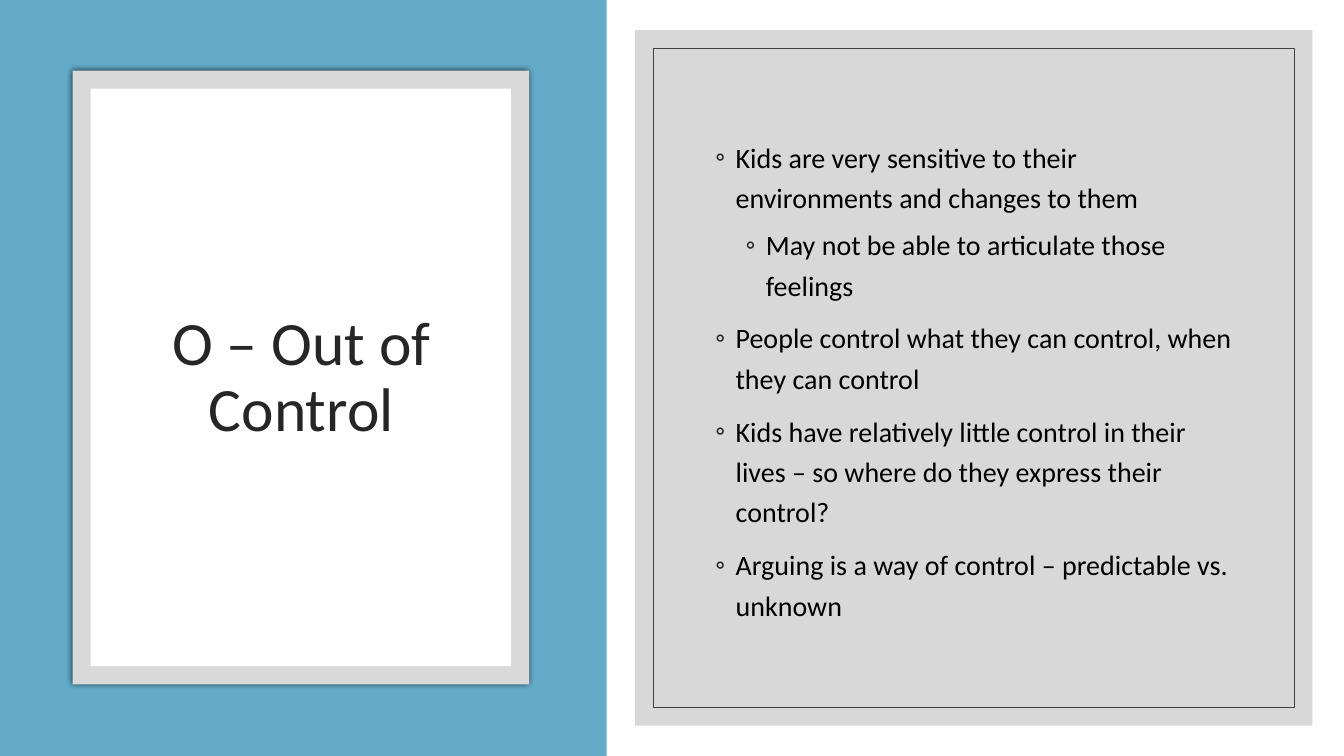
from dataclasses import dataclass

from lxml import etree
from pptx import Presentation
from pptx.dml.color import RGBColor
from pptx.enum.text import MSO_ANCHOR, MSO_AUTO_SIZE, PP_ALIGN
from pptx.enum.shapes import MSO_SHAPE
from pptx.oxml.ns import qn
from pptx.util import Pt

RECT = MSO_SHAPE.RECTANGLE
MIDDLE = MSO_ANCHOR.MIDDLE
FIXED = MSO_AUTO_SIZE.NONE
LEFT, CENTER = PP_ALIGN.LEFT, PP_ALIGN.CENTER


@dataclass(frozen=True)
class Theme:
    font: str = "Calibri"
    white: str = "FFFFFF"
    black: str = "000000"
    blue: str = "63ABC9"
    frame: str = "D9D9D9"
    panel: str = "BFBFBF"
    edge: str = "404040"
    ink: str = "262626"
    head: int = 44
    body: int = 20


WIDE, HIGH = 960, 540
RIM = 12.96  # gap between each outer frame and its inner one
POINTS = [
    (0, "Kids are very sensitive to their environments and changes to them"),
    (1, "May not be able to articulate those feelings"),
    (0, "People control what they can control, when they can control"),
    (0, "Kids have relatively little control in their lives – so where do they express their control?"),
    (0, "Arguing is a way of control – predictable vs. unknown"),
]


def inset(box, gap):
    left, top, width, height = box
    return left + gap, top + gap, width - 2 * gap, height - 2 * gap


def child(parent, tag, **attrs):
    return etree.SubElement(parent, qn(tag), attrs)


class Builder:
    def __init__(self, slide, theme):
        self.slide = slide
        self.theme = theme

    def rect(self, box, fill=None, line=None, alpha=None, glow=False):
        shape = self.slide.shapes.add_shape(RECT, *map(Pt, box))
        shape.shadow.inherit = False
        if fill:
            shape.fill.solid()
            shape.fill.fore_color.rgb = RGBColor.from_string(fill)
        else:
            shape.fill.background()
        if line:
            shape.line.color.rgb = RGBColor.from_string(line)
            shape.line.width = Pt(0.5)
        else:
            shape.line.fill.background()
        props = shape.element.spPr
        if alpha:
            child(props.find(".//" + qn("a:srgbClr")), "a:alpha", val=str(alpha * 1000))
        if glow:
            shade = child(props.find(qn("a:effectLst")), "a:outerShdw",
                          blurRad=str(Pt(4)), dist="0", dir="0", algn="ctr", rotWithShape="0")
            tint = child(shade, "a:srgbClr", val=self.theme.black)
            child(tint, "a:alpha", val="66000")

    def frame(self, shape):
        text = shape.text_frame
        text.word_wrap = True
        text.auto_size = FIXED
        text.vertical_anchor = MIDDLE
        return text

    def style(self, para, size, color, align, space):
        para.alignment = align
        para.line_spacing = space
        para.font.name = self.theme.font
        para.font.size = Pt(size)
        para.font.color.rgb = RGBColor.from_string(color)

    def title(self, box, words):
        shape = self.slide.shapes.title
        shape.left, shape.top, shape.width, shape.height = map(Pt, box)
        text = self.frame(shape)
        text.text = words
        self.style(text.paragraphs[0], self.theme.head, self.theme.ink, CENTER, 0.9)
        # Bring the title in front of the panels
        shape.element.getparent().append(shape.element)

    def bullets(self, box, points):
        text = self.frame(self.slide.shapes.add_textbox(*map(Pt, box)))
        for index, (level, words) in enumerate(points):
            para = text.add_paragraph() if index else text.paragraphs[0]
            para.text = words
            para.level = level
            para.space_before = Pt(5 if level else 9)
            props = para._p.get_or_add_pPr()
            props.set("marL", str(Pt(14.4 + 21.6 * level)))
            props.set("indent", str(Pt(-14.4)))
            color = child(props, "a:buClr")
            child(color, "a:srgbClr", val=self.theme.ink)
            child(props, "a:buFont", typeface=self.theme.font)
            child(props, "a:buChar", char="◦")
            self.style(para, self.theme.body, self.theme.black, LEFT, 1.2)


def main():
    deck = Presentation()
    deck.slide_width, deck.slide_height = Pt(WIDE), Pt(HIGH)
    theme = Theme()
    build = Builder(deck.slides.add_slide(deck.slide_layouts[5]), theme)

    # Backdrop
    build.rect((0, 0, WIDE, HIGH), theme.white)
    build.rect((0, 0, 433.3, HIGH), theme.blue)

    # Title card
    card = (51.84, 50.4, 326.16, 438.48)
    build.rect(card, theme.frame, glow=True)
    build.rect(inset(card, RIM), theme.white)
    build.title((77.76, 93.6, 275.04, 353.52), "O – Out of Control")

    # Bullet panel
    panel = (453.6, 21.6, 483.84, 496.8)
    build.rect(panel, theme.panel, alpha=60)
    build.rect(inset(panel, RIM), line=theme.edge)
    build.bullets((504, 73.44, 383.76, 392.4), POINTS)

    deck.save("out.pptx")


if __name__ == "__main__":
    main()
